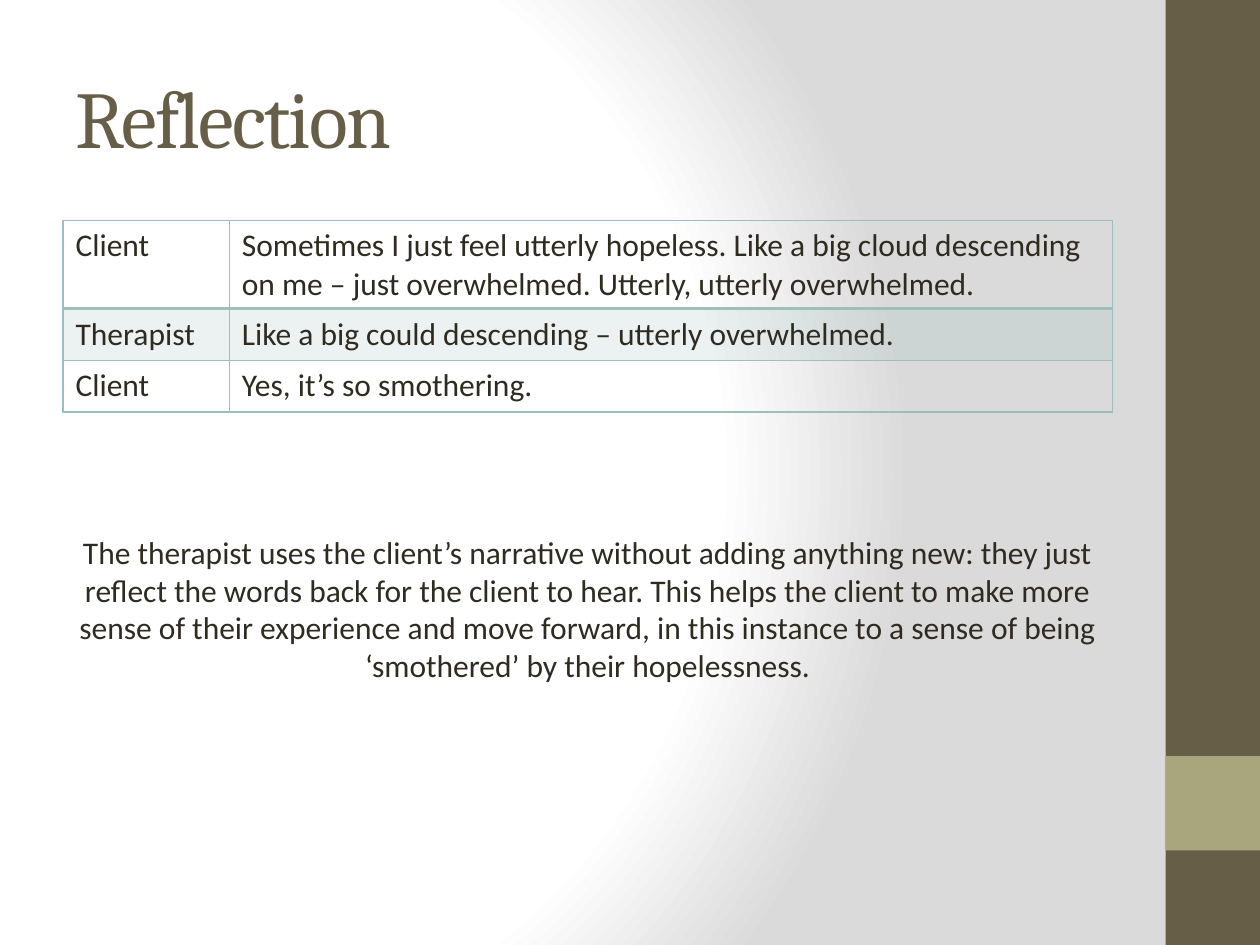
from dataclasses import dataclass

from pptx import Presentation
from pptx.dml.color import RGBColor
from pptx.enum.shapes import MSO_SHAPE
from pptx.enum.text import MSO_ANCHOR, PP_ALIGN
from pptx.oxml import parse_xml
from pptx.oxml.ns import nsdecls
from pptx.util import Inches, Pt

RECTANGLE = MSO_SHAPE.RECTANGLE
MIDDLE, TOP = MSO_ANCHOR.MIDDLE, MSO_ANCHOR.TOP
LEFT, CENTER = PP_ALIGN.LEFT, PP_ALIGN.CENTER


@dataclass(frozen=True)
class Theme:
    brown: str = "675E47"
    olive: str = "A9A57C"
    teal: str = "9CBEBD"
    ink: str = "2F2B20"
    white: str = "FFFFFF"
    gray: str = "DADADA"
    heading_font: str = "Cambria"
    body_font: str = "Calibri"
    heading_size: int = 46
    body_size: int = 18


theme = Theme()
HEADING = {"name": theme.heading_font, "size": Pt(theme.heading_size)}
BODY = {"name": theme.body_font, "size": Pt(theme.body_size)}


def write_text(text_frame, text, font_format, color, alignment=LEFT, anchor=TOP):
    text_frame.word_wrap = True
    text_frame.vertical_anchor = anchor
    paragraph = text_frame.paragraphs[0]
    paragraph.alignment = alignment
    run = paragraph.add_run()
    run.text = text
    for attribute, value in font_format.items():
        setattr(run.font, attribute, value)
    run.font.color.rgb = RGBColor.from_string(color)
    return run


presentation = Presentation()
presentation.slide_width, presentation.slide_height = Inches(10), Inches(7.5)
slide = presentation.slides.add_slide(presentation.slide_layouts[6])

# Background: radial gradient
stops = "".join(
    f'<a:gs pos="{position * 1000}"><a:srgbClr val="{color}"/></a:gs>'
    for position, color in ((0, theme.white), (75, theme.white), (100, theme.gray))
)
slide.element.cSld.insert(0, parse_xml(
    f'<p:bg {nsdecls("p", "a")}><p:bgPr><a:gradFill rotWithShape="1">'
    f'<a:gsLst>{stops}</a:gsLst><a:path path="circle">'
    '<a:fillToRect l="20000" t="50000" r="100000" b="50000"/></a:path>'
    '</a:gradFill><a:effectLst/></p:bgPr></p:bg>'
))

# Side band with its accent square
for top, height, color in ((0, 7.5, theme.brown), (6, 0.75, theme.olive)):
    shape = slide.shapes.add_shape(
        RECTANGLE, Inches(9.25), Inches(top), Inches(0.75), Inches(height))
    shape.shadow.inherit = False
    shape.fill.solid()
    shape.fill.fore_color.rgb = RGBColor.from_string(color)
    shape.line.fill.background()

# Title
content_left, content_width = Inches(0.5), Inches(8.33)
title = slide.shapes.add_textbox(content_left, Inches(0.3), content_width, Inches(1.25))
title_run = write_text(title.text_frame, "Reflection", HEADING, theme.brown, anchor=MIDDLE)
title_run.font._element.set("spc", "-100")

# Dialogue table
dialogue = [
    ("Client", "Sometimes I just feel utterly hopeless. Like a big cloud descending "
               "on me – just overwhelmed. Utterly, utterly overwhelmed."),
    ("Therapist", "Like a big could descending – utterly overwhelmed."),
    ("Client", "Yes, it’s so smothering."),
]
table = slide.shapes.add_table(
    len(dialogue), 2, content_left, Inches(1.75), content_width, Inches(1.52)).table
table.first_row = table.horz_banding = False
for column, width in zip(table.columns, (1.32, 7.01)):
    column.width = Inches(width)
for row, height in zip(table.rows, (0.7, 0.41, 0.41)):
    row.height = Inches(height)

for row_index, entry in enumerate(dialogue):
    for column_index, text in enumerate(entry):
        cell = table.cell(row_index, column_index)
        write_text(cell.text_frame, text, BODY, theme.ink)
        if row_index == 1:
            cell.fill.solid()
            cell.fill.fore_color.rgb = RGBColor.from_string(theme.teal)
        else:
            cell.fill.background()
        properties = cell._tc.get_or_add_tcPr()
        for color in properties.iter("{*}srgbClr"):
            color.append(parse_xml(f'<a:alpha {nsdecls("a")} val="20000"/>'))
        # A heavier line separates the first row from the second
        heavy_side = {0: "lnB", 1: "lnT"}.get(row_index)
        for position, side in enumerate(("lnL", "lnR", "lnT", "lnB")):
            width = Pt(2 if side == heavy_side else 1)
            properties.insert(position, parse_xml(
                f'<a:{side} {nsdecls("a")} w="{width}"><a:solidFill>'
                f'<a:srgbClr val="{theme.teal}"/></a:solidFill></a:{side}>'))

# Explanation
explanation = slide.shapes.add_textbox(
    content_left, Inches(4.18), content_width, Inches(1.31))
write_text(
    explanation.text_frame,
    "The therapist uses the client’s narrative without adding anything new: they just "
    "reflect the words back for the client to hear. This helps the client to make more "
    "sense of their experience and move forward, in this instance to a sense of being "
    "‘smothered’ by their hopelessness.",
    BODY, theme.ink, CENTER)

presentation.save("out.pptx")
